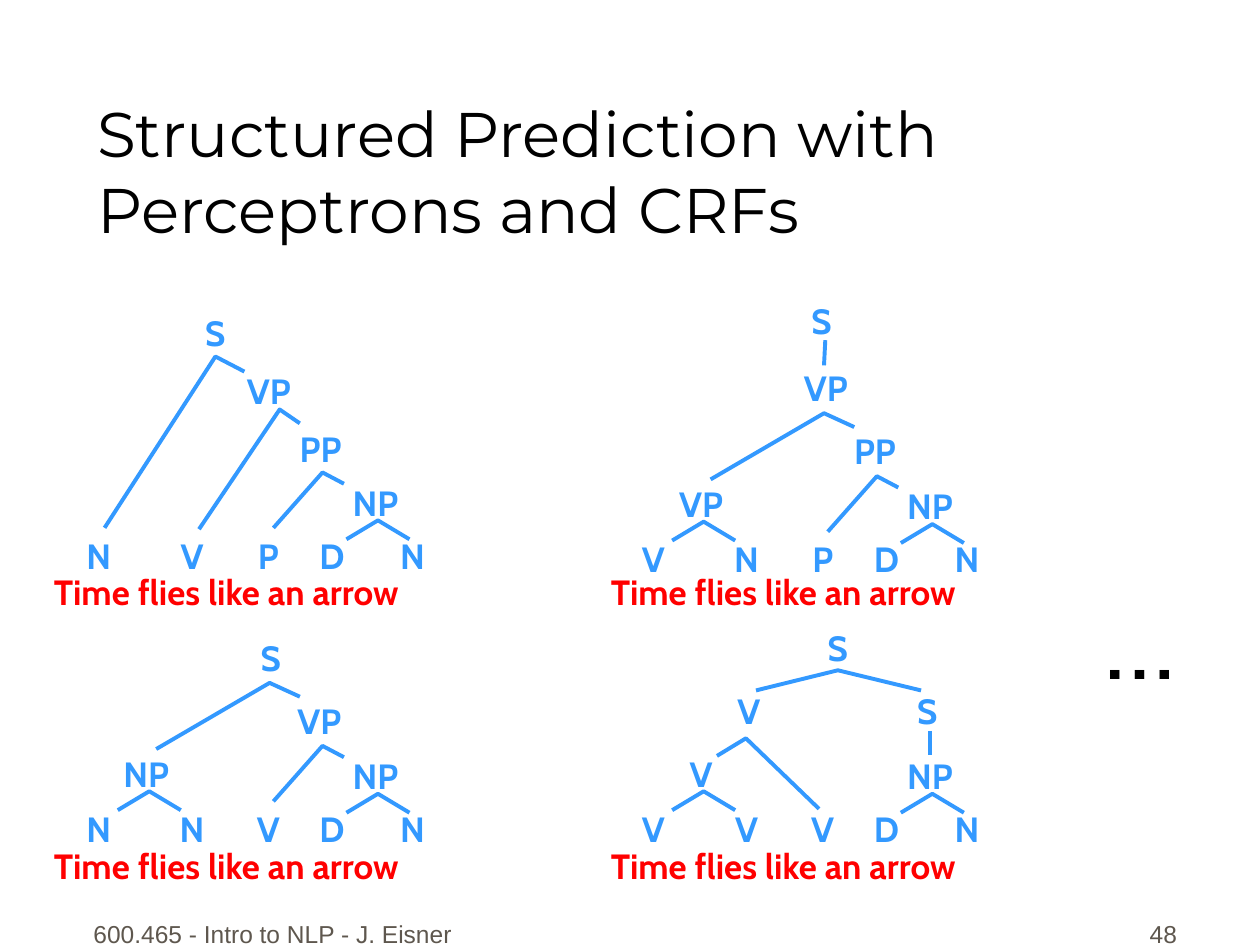
from lxml import etree
from pptx import Presentation
from pptx import util as u
from pptx.dml import color
from pptx.enum import shapes, text
from pptx.oxml import ns

COLUMNS, ROWS = 100, 75
CELL = u.Inches(10) // COLUMNS
BLUE, RED, BLACK, GREY = "3399FF", "FF0000", "000000", "5E574E"
LABEL = {"size": u.Pt(20), "name": "Cabin", "bold": True}
FOOTER = {"size": u.Pt(14), "name": "Arial", "bold": False}
TITLE = {"size": u.Pt(36), "name": "Montserrat", "bold": False}
ELLIPSIS = {"size": u.Pt(60), "name": "Cabin", "bold": False}
CENTER, LEFT, RIGHT = text.PP_ALIGN.CENTER, text.PP_ALIGN.LEFT, text.PP_ALIGN.RIGHT
TOP, BOTTOM = text.MSO_ANCHOR.TOP, text.MSO_ANCHOR.BOTTOM

LEAF_COLUMNS = (4.55, 11.95, 18, 23.05, 29.45)
NOUN_PHRASE = ("NP", 26.5, -4.2)
RIGHT_FORK, LEFT_FORK = (26.7, -0.6), (8.55, -0.8)
SPINE = ((18.4, 0), (22.3, -4.4), (24, -3.5))
WIDE = ((9.1, -4.15), (18.1, -9.4), (20.5, -8.3))

TREES = [
    {"corner": (3.3, 41.9), "leaves": "NVPDN",
     "nodes": [("PP", 22.15, -8.5), ("VP", 18.05, -13.1), ("S", 13.8, -17.7)],
     "forks": [RIGHT_FORK],
     "branches": [SPINE, ((12.5, 0.1), (18.9, -9.4), (20.5, -8.3)),
                  ((5, 0), (13.8, -13.6), (16.1, -12.4))]},
    {"corner": (3.3, 63.6), "leaves": "NNVDN",
     "nodes": [("VP", 22.05, -8.6), ("S", 18.2, -13.6), ("NP", 8.3, -4.4)],
     "forks": [RIGHT_FORK, LEFT_FORK],
     "branches": [SPINE, WIDE]},
    {"corner": (47.3, 42.2), "leaves": "VNPDN",
     "nodes": [("PP", 22.15, -8.6), ("VP", 18.25, -13.6), ("VP", 8.35, -4.4),
               ("S", 17.9, -18.9)],
     "forks": [RIGHT_FORK, LEFT_FORK],
     "branches": [SPINE, WIDE, ((18.2, -15.2), (18.1, -13.2))]},
    {"corner": (47.3, 63.6), "leaves": "VVVDN",
     "nodes": [("V", 8.35, -4.4), ("V", 12.15, -9.4), ("S", 19.2, -14.4),
               ("S", 26.3, -9.4)],
     "forks": [RIGHT_FORK, LEFT_FORK],
     "branches": [((17.7, 0.6), (11.9, -5), (9.6, -3.6)),
                  ((12.7, -8.8), (19.2, -10.4), (25.8, -8.8)),
                  ((26.5, -5.6), (26.5, -3.7))]},
]


def grid(*cells):
    """Turn grid counts into slide lengths."""
    return [round(CELL * count) for count in cells]


def rgb(code):
    """Turn a hex string into a colour."""
    return color.RGBColor.from_string(code)


def write(frame, words, style, code, align, anchor, wrap):
    """Fill a text frame with one formatted paragraph."""
    frame.word_wrap = wrap
    frame.auto_size = text.MSO_AUTO_SIZE.NONE
    frame.vertical_anchor = anchor
    para = frame.paragraphs[0]
    para.alignment = align
    span = para.add_run()
    span.text = words
    for key, value in style.items():
        setattr(span.font, key, value)
    span.font.color.rgb = rgb(code)


def add_text(page, box, words, style, code, align=CENTER, anchor=TOP, wrap=False):
    """Place a text box on the grid."""
    frame = page.shapes.add_textbox(*grid(*box)).text_frame
    write(frame, words, style, code, align, anchor, wrap)


def add_branch(page, points):
    """Draw a straight stem or a bent branch through grid points."""
    ends = [grid(*point) for point in points]
    if len(ends) == 2:
        branch = page.shapes.add_connector(
            shapes.MSO_CONNECTOR.STRAIGHT, *ends[0], *ends[1])
        etree.SubElement(branch._element.spPr, ns.qn("a:effectLst"))
    else:
        outline = page.shapes.build_freeform(*ends[0])
        outline.add_line_segments(ends[1:], close=False)
        branch = outline.convert_to_shape()
        branch.fill.background()
        branch.shadow.inherit = False
    branch.line.color.rgb = rgb(BLUE)
    branch.line.width = u.Pt(2.25)


def add_tree(page, corner, leaves, nodes, forks, branches):
    """Draw a parse tree relative to the left end of its leaf row."""
    left, top = corner
    labels = [(leaf, column, 0) for leaf, column in zip(leaves, LEAF_COLUMNS)]
    for words, column, row in labels + [NOUN_PHRASE] + nodes:
        add_text(page, (left + column - 3, top + row, 6, 4.3), words, LABEL, BLUE)
    bent = [((x - 2.5, y + 1.5), (x, y), (x + 2.5, y + 1.5)) for x, y in forks]
    for points in bent + branches:
        add_branch(page, [(left + x, top + y) for x, y in points])


def add_title(page, box, words):
    """Place and format the title placeholder."""
    title = page.shapes.title
    title.left, title.top, title.width, title.height = grid(*box)
    write(title.text_frame, words, TITLE, BLACK, LEFT, BOTTOM, True)


def add_footer(page, top, height):
    """Place the course name and the page number."""
    add_text(page, (5.8, top, 31.7, height), "600.465 - Intro to NLP - J. Eisner",
             FOOTER, GREY, CENTER, BOTTOM, True)
    add_text(page, (73.6, top, 20.8, height), "48",
             FOOTER, GREY, RIGHT, BOTTOM, True)


def main():
    """Build the slide."""
    deck = Presentation()
    deck.slide_width, deck.slide_height = grid(COLUMNS, ROWS)
    page = deck.slides.add_slide(deck.slide_layouts[5])
    add_title(page, (6.7, 7.5, 91.1, 12.5),
              "Structured Prediction with Perceptrons and CRFs")
    add_footer(page, 70.8, 5)
    for left in (3.3, 47.5):
        for top in (44.8, 66.5):
            add_text(page, (left, top, 34.6, 4.3), "Time flies like an arrow",
                     LABEL, RED, LEFT, TOP, True)
    for tree in TREES:
        add_tree(page, **tree)
    add_text(page, (86.1, 45.1, 8.8, 11), "…", ELLIPSIS, BLACK)
    deck.save("out.pptx")


if __name__ == "__main__":
    main()
